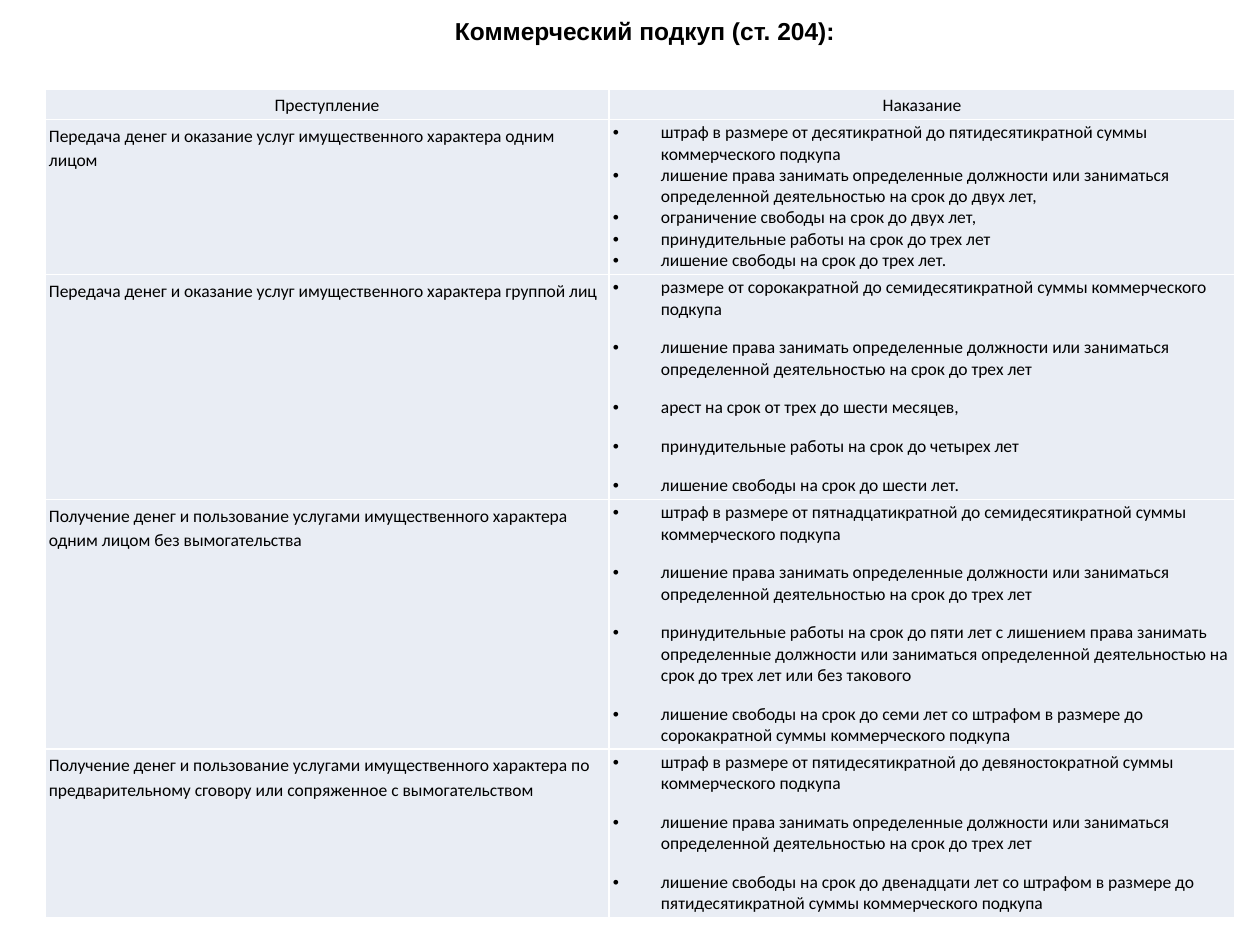
from dataclasses import dataclass

import lxml.etree
import pptx
import pptx.dml.color
import pptx.enum.text
import pptx.oxml.ns
import pptx.table
import pptx.text.text
import pptx.util

PX_PER_INCH = 126
ALIGN = pptx.enum.text.PP_ALIGN


@dataclass(frozen=True)
class Theme:
    text: str = "000000"
    cell: str = "E9EDF4"
    border: str = "FFFFFF"
    title_font: str = "Arial"
    table_font: str = "Calibri"
    title_size: int = 14
    table_size: int = 10
    paragraph_gap: int = 10
    line_spacing: float = 1.15


@dataclass(frozen=True)
class Offence:
    crime: str
    penalties: tuple[str, ...]
    height: int
    gap: int = Theme.paragraph_gap


THEME = Theme()
TITLE = "Коммерческий подкуп (ст. 204):"
HEADINGS = ("Преступление", "Наказание")
HEADER_HEIGHT = 30
COLUMN_WIDTHS = (564, 626)
BAN = ("лишение права занимать определенные должности или заниматься "
       "определенной деятельностью на срок до ")

OFFENCES = (
    Offence(
        "Передача денег и оказание услуг имущественного характера одним лицом",
        ("штраф в размере от десятикратной до пятидесятикратной суммы коммерческого подкупа",
         BAN + "двух лет,",
         "ограничение свободы на срок до двух лет,",
         "принудительные работы на срок до трех лет",
         "лишение свободы на срок до трех лет."),
        height=155, gap=0),
    Offence(
        "Передача денег и оказание услуг имущественного характера группой лиц",
        ("размере от сорокакратной до семидесятикратной суммы коммерческого подкупа",
         BAN + "трех лет",
         "арест на срок от трех до шести месяцев,",
         "принудительные работы на срок до четырех лет",
         "лишение свободы на срок до шести лет."),
        height=225),
    Offence(
        "Получение денег и пользование услугами имущественного характера "
        "одним лицом без вымогательства",
        ("штраф в размере от пятнадцатикратной до семидесятикратной суммы коммерческого подкупа",
         BAN + "трех лет",
         "принудительные работы на срок до пяти лет с лишением права занимать определенные "
         "должности или заниматься определенной деятельностью на срок до трех лет или без такового",
         "лишение свободы на срок до семи лет со штрафом в размере до сорокакратной суммы "
         "коммерческого подкупа"),
        height=249),
    Offence(
        "Получение денег и пользование услугами имущественного характера по "
        "предварительному сговору или сопряженное с вымогательством",
        ("штраф в размере от пятидесятикратной до девяностократной суммы коммерческого подкупа",
         BAN + "трех лет",
         "лишение свободы на срок до двенадцати лет со штрафом в размере до "
         "пятидесятикратной суммы коммерческого подкупа"),
        height=168),
)


def px(length: int) -> pptx.util.Emu:
    return pptx.util.Emu(round(length * 914400 / PX_PER_INCH))


def rgb(color: str) -> pptx.dml.color.RGBColor:
    return pptx.dml.color.RGBColor.from_string(color)


def set_font(paragraph: pptx.text.text._Paragraph, name: str, size: int, bold: bool) -> None:
    for run in paragraph.runs:
        run.font.name = name
        run.font.size = pptx.util.Pt(size)
        run.font.bold = bold
        run.font.color.rgb = rgb(THEME.text)


def set_indent(paragraph: pptx.text.text._Paragraph, margin: int, first_line: int) -> None:
    properties = paragraph._p.get_or_add_pPr()
    properties.set("marL", str(px(margin)))
    properties.set("indent", str(px(first_line)))


def add_bullet(paragraph: pptx.text.text._Paragraph) -> None:
    set_indent(paragraph, 48, -48)
    properties = paragraph._p.get_or_add_pPr()
    font = lxml.etree.SubElement(properties, pptx.oxml.ns.qn("a:buFont"))
    font.set("typeface", THEME.title_font)
    bullet = lxml.etree.SubElement(properties, pptx.oxml.ns.qn("a:buChar"))
    bullet.set("char", "•")


def style_cell(cell: pptx.table._Cell) -> None:
    cell.margin_left = cell.margin_right = px(4)
    cell.margin_top = cell.margin_bottom = px(3)
    properties = cell._tc.get_or_add_tcPr()
    for side in ("lnL", "lnR", "lnT", "lnB"):
        line = lxml.etree.SubElement(properties, pptx.oxml.ns.qn(f"a:{side}"))
        line.set("w", str(pptx.util.Pt(1)))
        fill = lxml.etree.SubElement(line, pptx.oxml.ns.qn("a:solidFill"))
        color = lxml.etree.SubElement(fill, pptx.oxml.ns.qn("a:srgbClr"))
        color.set("val", THEME.border)
    cell.fill.solid()
    cell.fill.fore_color.rgb = rgb(THEME.cell)


def fill_label(cell: pptx.table._Cell, label: str, alignment: ALIGN) -> None:
    style_cell(cell)
    cell.text_frame.text = label
    paragraph = cell.text_frame.paragraphs[0]
    paragraph.alignment = alignment
    paragraph.line_spacing = THEME.line_spacing
    paragraph.space_after = pptx.util.Pt(THEME.paragraph_gap)
    set_font(paragraph, THEME.table_font, THEME.table_size, False)


def fill_penalties(cell: pptx.table._Cell, offence: Offence) -> None:
    style_cell(cell)
    cell.text_frame.text = "\n".join(offence.penalties)
    for paragraph in cell.text_frame.paragraphs:
        paragraph.space_after = pptx.util.Pt(offence.gap)
        add_bullet(paragraph)
        set_font(paragraph, THEME.table_font, THEME.table_size, False)


def main() -> None:
    presentation = pptx.Presentation()
    presentation.slide_width = px(1260)
    presentation.slide_height = px(945)
    slide = presentation.slides.add_slide(presentation.slide_layouts[5])

    # Title
    title = slide.shapes.title
    title.left, title.top, title.width, title.height = px(203), px(8), px(854), px(80)
    frame = title.text_frame
    frame.text = TITLE
    frame.word_wrap = True
    frame.auto_size = pptx.enum.text.MSO_AUTO_SIZE.NONE
    frame.vertical_anchor = pptx.enum.text.MSO_ANCHOR.TOP
    frame.margin_top = px(8)
    heading = frame.paragraphs[0]
    heading.alignment = ALIGN.CENTER
    set_indent(heading, 0, 30)
    set_font(heading, THEME.title_font, THEME.title_size, True)

    # Table grid
    heights = (HEADER_HEIGHT, *(offence.height for offence in OFFENCES))
    table = slide.shapes.add_table(
        len(heights), len(COLUMN_WIDTHS),
        px(45), px(89), px(sum(COLUMN_WIDTHS)), px(sum(heights))).table
    table.first_row = table.horz_banding = False
    for column, width in zip(table.columns, COLUMN_WIDTHS):
        column.width = px(width)
    for row, height in zip(table.rows, heights):
        row.height = px(height)

    # Column headings, then one row per offence
    for column_index, label in enumerate(HEADINGS):
        fill_label(table.cell(0, column_index), label, ALIGN.CENTER)
    for row_index, offence in enumerate(OFFENCES, start=1):
        fill_label(table.cell(row_index, 0), offence.crime, ALIGN.LEFT)
        fill_penalties(table.cell(row_index, 1), offence)

    presentation.save("out.pptx")


if __name__ == "__main__":
    main()
